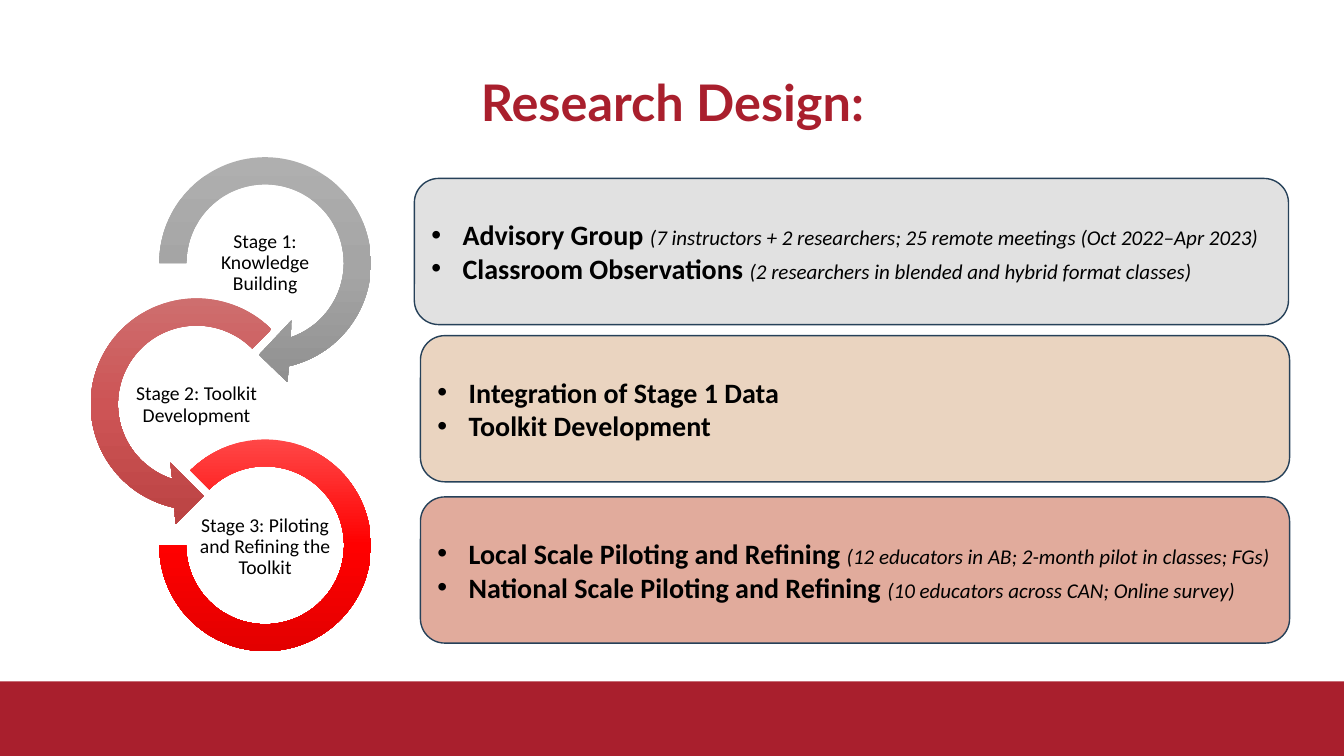
from copy import deepcopy
from math import cos, radians, sin, tan

from lxml import etree
from pptx import Presentation, util as u
from pptx.dml.color import RGBColor
from pptx.enum import shapes, text
from pptx.oxml.ns import qn

HUES = {
    "brand": "A91F2D", "ink": "000000", "edge": "264159",
    "gray": "A5A5A5", "tan": "B76D27", "rust": "B22800",
}
FADES = {
    "gray": ("AFAFAF", "A5A5A5", "919191"),
    "rose": ("CE7070", "CD5455", "BB4343"),
    "red": ("FF4747", "FF0000", "E30000"),
}
OUTER, INNER = 1.05, 0.78  # ring radii
RING_TOP, RING_STEP = 2.61, 1.4  # ring centres
RIGHT, LEFT = 2.63, 1.95
CURVES = 3  # Bezier curves in each arc


def rgb(value):
    return RGBColor.from_string(value)


def box(area):
    return [u.Inches(n) for n in area]


def paint(shape, hue, alpha=None):
    shape.shadow.inherit = False
    shape.fill.solid()
    shape.fill.fore_color.rgb = rgb(HUES[hue])
    shape.line.fill.background()
    if alpha:
        color = shape._element.spPr.find(".//" + qn("a:srgbClr"))
        etree.SubElement(color, qn("a:alpha")).set("val", str(alpha * 1000))


def fade(shape, hues):
    """Fill with a three-stop gradient running downward."""
    shape.shadow.inherit = False
    shape.line.fill.background()
    shape.fill.gradient()
    shape.fill.gradient_angle = 270
    stops = shape._element.spPr.find(".//" + qn("a:gsLst"))
    stops.append(deepcopy(stops[-1]))
    for n, (stop, hue) in enumerate(zip(shape.fill.gradient_stops, hues)):
        stop.position = n / 2
        stop.color.rgb = rgb(hue)


def setup(shape, pad=(0.1, 0.05)):
    frame = shape.text_frame
    frame.word_wrap = True
    frame.vertical_anchor = text.MSO_ANCHOR.MIDDLE
    frame.margin_left = frame.margin_right = u.Inches(pad[0])
    frame.margin_top = frame.margin_bottom = u.Inches(pad[1])
    return frame


def write(para, words, size=20, font="Calibri", hue="ink", bold=False, italic=False):
    run = para.add_run()
    run.text = words
    face = run.font
    face.name, face.size = font, u.Pt(size)
    face.bold, face.italic = bold, italic
    face.color.rgb = rgb(HUES[hue])


def label(slide, area, words, pad=(0.1, 0.05), **style):
    para = setup(slide.shapes.add_textbox(*box(area)), pad).paragraphs[0]
    para.alignment = text.PP_ALIGN.CENTER
    para.line_spacing = 0.9
    write(para, words, **style)


def bullet(para):
    props = para._p.get_or_add_pPr()
    props.set("marL", str(u.Inches(0.31)))
    props.set("indent", str(-u.Inches(0.31)))
    etree.SubElement(props, qn("a:buFont")).set("typeface", "Arial")
    etree.SubElement(props, qn("a:buChar")).set("char", "•")


def panel(slide, area, hue, alpha, items):
    card = slide.shapes.add_shape(shapes.MSO_SHAPE.ROUNDED_RECTANGLE, *box(area))
    paint(card, hue, alpha)
    card.line.color.rgb = rgb(HUES["edge"])
    card.line.width = u.Pt(1)
    frame = setup(card)
    for n, (head, note) in enumerate(items):
        para = frame.add_paragraph() if n else frame.paragraphs[0]
        para.alignment = text.PP_ALIGN.LEFT
        bullet(para)
        write(para, head, bold=True)
        if note:
            write(para, note, size=15, italic=True)


def arc(mid, radius, start, end):
    """Return the first point, then two controls and an end per curve."""
    step = radians(end - start) / CURVES
    pull = 4 / 3 * tan(step / 4)

    def spot(turn, lean=0):
        return (mid[0] + radius * (cos(turn) - lean * sin(turn)),
                mid[1] + radius * (sin(turn) + lean * cos(turn)))

    dots = [spot(radians(start))]
    for n in range(CURVES):
        turn = radians(start) + n * step
        dots += [spot(turn, pull), spot(turn + step, -pull), spot(turn + step)]
    return dots


def bend(shape, firsts):
    """Join three line segments into one curve at each first index."""
    lines = shape._element.spPr.findall(".//" + qn("a:lnTo"))
    for first in firsts:
        curve = etree.Element(qn("a:cubicBezTo"))
        lines[first].addprevious(curve)
        for line in lines[first:first + 3]:
            curve.append(line[0])
            line.getparent().remove(line)


def arrow(slide, mid, start, end, close, head, hues):
    """Draw a ring open at start, with a head between its two far ends."""
    outer, inner = arc(mid, OUTER, start, end), arc(mid, INNER, close, start)
    tips = [(mid[0] + x, mid[1] + y) for x, y in head]
    dots = [box(dot) for dot in outer + tips + inner]
    form = slide.shapes.build_freeform(*dots[0], scale=1.0)
    form.add_line_segments(dots[1:], close=True)
    shape = form.convert_to_shape()
    back = len(outer) + len(tips)
    bend(shape, [base + 3 * n for base in (0, back) for n in range(CURVES)])
    fade(shape, hues)


def main():
    deck = Presentation()
    deck.slide_width, deck.slide_height = u.Inches(13.33), u.Inches(7.5)
    slide = deck.slides.add_slide(deck.slide_layouts[6])

    # Footer band and title
    band = slide.shapes.add_shape(shapes.MSO_SHAPE.RECTANGLE, *box((0, 6.76, 13.33, 0.74)))
    paint(band, "brand")
    label(slide, (0.92, 0.32, 11.5, 1.45), "Research Design:",
          size=36, font="Lato", hue="brand", bold=True)

    # Chain of rings
    mids = [(x, RING_TOP + n * RING_STEP) for n, x in enumerate((RIGHT, LEFT, RIGHT))]
    arrow(slide, mids[0], -180, 77, 71,
          [(0.22, 1.18), (-0.06, 0.91), (0.26, 0.57)], FADES["gray"])
    arrow(slide, mids[1], -45, -258, -252,
          [(-0.21, 1.19), (0.07, 0.91), (-0.26, 0.58)], FADES["rose"])
    x, y = mids[2]
    ring = slide.shapes.add_shape(
        shapes.MSO_SHAPE.BLOCK_ARC, *box((x - OUTER, y - OUTER, 2 * OUTER, 2 * OUTER)))
    for n, value in enumerate((135, 108, 0.127)):
        ring.adjustments[n] = value
    fade(ring, FADES["red"])

    # Stage names
    stages = ("Stage 1: Knowledge Building", "Stage 2: Toolkit Development",
              "Stage 3: Piloting and Refining the Toolkit")
    for n, name in enumerate(stages):
        label(slide, (mids[n][0] - 0.68, 2.27 + 1.41 * n, 1.36, 0.68), name,
              pad=(0.01, 0.01), size=14)

    # Stage details
    panel(slide, (4.11, 1.77, 8.67, 1.45), "gray", 33, [
        ("Advisory Group ", "(7 instructors + 2 researchers; 25 remote meetings (Oct 2022–Apr 2023)"),
        ("Classroom Observations ", "(2 researchers in blended and hybrid format classes)")])
    panel(slide, (4.17, 3.33, 8.62, 1.45), "tan", 29, [
        ("Integration of Stage 1 Data", ""),
        ("Toolkit Development", "")])
    panel(slide, (4.17, 4.93, 8.62, 1.45), "rust", 39, [
        ("Local Scale Piloting and Refining ", "(12 educators in AB; 2-month pilot in classes; FGs)"),
        ("National Scale Piloting and Refining ", "(10 educators across CAN; Online survey)")])

    deck.save("out.pptx")


if __name__ == "__main__":
    main()
